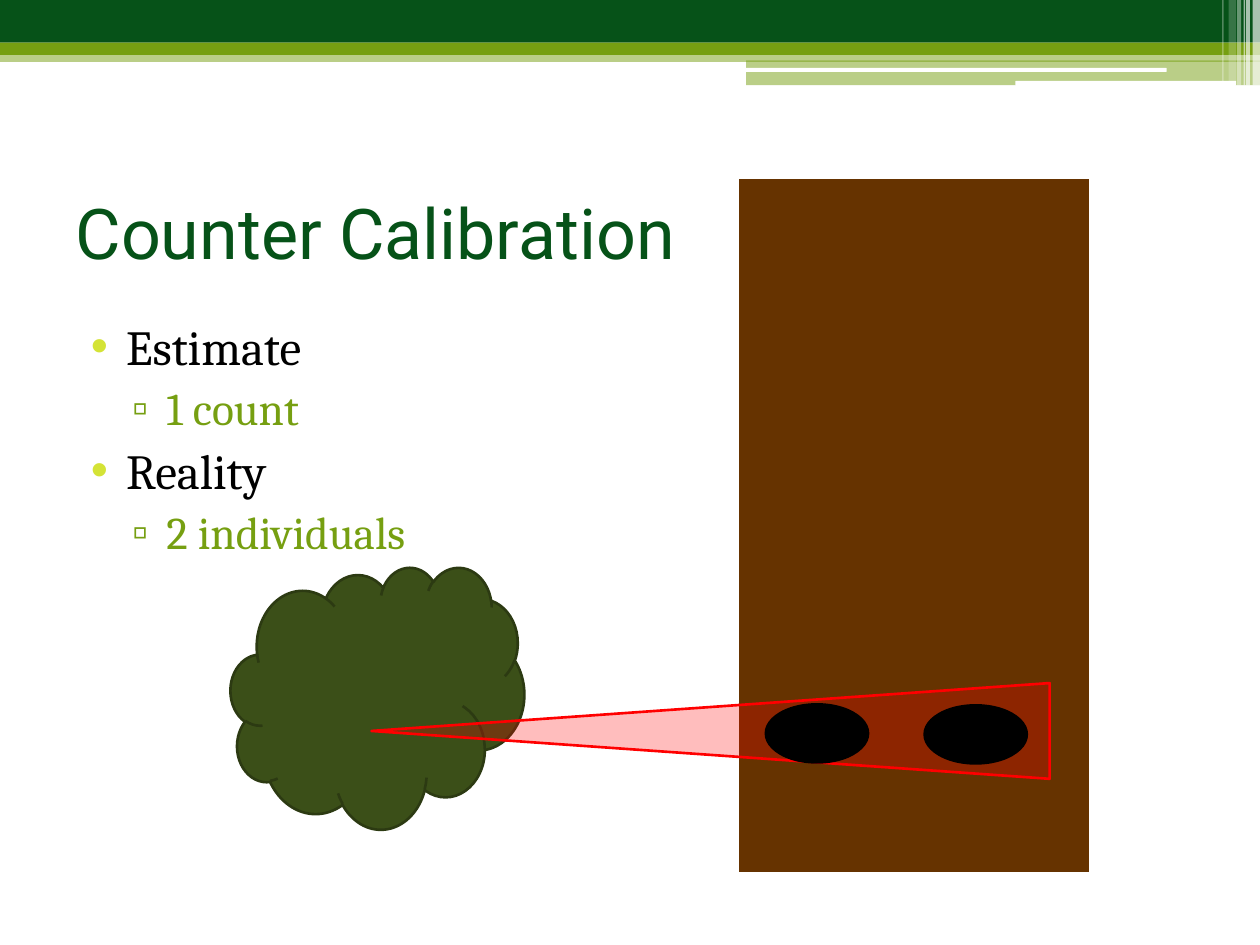
from pptx import Presentation
from pptx.dml.color import RGBColor
from pptx.enum.shapes import MSO_CONNECTOR, MSO_SHAPE as Kind
from pptx.enum.text import MSO_ANCHOR, MSO_AUTO_SIZE, PP_ALIGN
from pptx.oxml.ns import qn
from pptx.util import Cm, Pt
from lxml.etree import SubElement

FOREST = RGBColor(0x06, 0x52, 0x18)
OLIVE = RGBColor(0x76, 0x9F, 0x11)
LIME = RGBColor(0xD4, 0xE3, 0x36)
WHITE = RGBColor(0xFF, 0xFF, 0xFF)
BLACK = RGBColor(0, 0, 0)
BARK = RGBColor(0x66, 0x33, 0x00)
LEAF = RGBColor(0x3B, 0x4F, 0x18)
LEAF_EDGE = RGBColor(0x2C, 0x3A, 0x12)
RED = RGBColor(0xFF, 0, 0)

WIDTH, HEIGHT = 25.4, 19.05
TITLE = "Counter Calibration"
OUTLINE = [("Estimate", 0), ("1 count", 1), ("Reality", 0), ("2 individuals", 1)]
LEVELS = [
    dict(bullet="•", bullet_color=LIME, margin=1.02, hang=0.71, size=28, color=BLACK),
    dict(bullet="▫", bullet_color=OLIVE, margin=1.83, hang=0.69, size=26, color=OLIVE),
]

BANDS = [
    (Kind.RECTANGLE, (0, 1.02, WIDTH, 0.23), OLIVE, 50),
    (Kind.RECTANGLE, (0, 0, WIDTH, 0.86), FOREST, 100),
    (Kind.RECTANGLE, (0, 0.86, WIDTH, 0.25), OLIVE, 100),
    (Kind.RECTANGLE, (15.04, 1.22, 10.36, 0.5), OLIVE, 50),
    (Kind.ROUNDED_RECTANGLE, (15.01, 1.37, 8.51, 0.08), WHITE, 100),
    (Kind.ROUNDED_RECTANGLE, (20.47, 1.63, 4.45, 0.1), WHITE, 100),
]
STRIPES = [
    (25.25, 0.15, 1.73, 65),
    (25.12, 0.08, 1.73, 65),
    (25.07, 0.03, 1.73, 60),
    (24.94, 0.08, 1.73, 40),
    (24.77, 0.15, 1.63, 20),
    (24.64, 0.03, 1.63, 30),
]
TRUNK = dict(x=18.43, top=3.61, bottom=17.58, thickness=200)
BUSH = (4.65, 11.43, 5.92, 5.28)
BEAM = (13.36, 7.9, 1.93, 13.67)
ANIMALS = [(15.44, 14.2, 2.06, 1.17), (18.64, 14.22, 2.06, 1.17)]


def add_figure(page, kind, place, fill, opacity=100, edge=None):
    shape = page.shapes.add_shape(kind, *map(Cm, place))
    shape.shadow.inherit = False
    shape.fill.solid()
    shape.fill.fore_color.rgb = fill
    if opacity < 100:
        color = shape.fill._xPr.find(qn("a:solidFill"))[0]
        SubElement(color, qn("a:alpha"), val=str(opacity * 1000))
    if edge is None:
        shape.line.fill.background()
    else:
        shape.line.color.rgb = edge
        shape.line.width = Pt(1.5)
    return shape


def place_text(box, place, anchor):
    box.left, box.top, box.width, box.height = map(Cm, place)
    settings = dict(word_wrap=True, auto_size=MSO_AUTO_SIZE.NONE, vertical_anchor=anchor)
    for name, value in settings.items():
        setattr(box.text_frame, name, value)
    return box.text_frame


def write(para, text, font, size, color):
    para.alignment = PP_ALIGN.LEFT
    span = para.add_run()
    span.text = text
    for name, value in dict(name=font, size=Pt(size)).items():
        setattr(span.font, name, value)
    span.font.color.rgb = color


def set_bullet(para, style):
    props = para._p.get_or_add_pPr()
    props.set("marL", str(Cm(style["margin"])))
    props.set("indent", str(-Cm(style["hang"])))
    color = SubElement(props, qn("a:buClr"))
    SubElement(color, qn("a:srgbClr"), val=str(style["bullet_color"]))
    SubElement(props, qn("a:buChar"), char=style["bullet"])


def add_trunk(page):
    x = Cm(TRUNK["x"])
    trunk = page.shapes.add_connector(
        MSO_CONNECTOR.STRAIGHT, x, Cm(TRUNK["top"]), x, Cm(TRUNK["bottom"]))
    trunk.line.color.rgb = BARK
    trunk.line.width = Pt(TRUNK["thickness"])
    SubElement(trunk._element.spPr, qn("a:effectLst"))


def main():
    deck = Presentation()
    deck.slide_width, deck.slide_height = Cm(WIDTH), Cm(HEIGHT)
    page = deck.slides.add_slide(deck.slide_layouts[1])

    heading = place_text(page.shapes.title, (1.27, 3.18, 22.86, 2.97), MSO_ANCHOR.MIDDLE)
    write(heading.paragraphs[0], TITLE, "Roboto", 40, FOREST)

    body = place_text(page.placeholders[1], (1.27, 6.25, 22.86, 12.01), MSO_ANCHOR.TOP)
    for index, (text, level) in enumerate(OUTLINE):
        para = body.add_paragraph() if index else body.paragraphs[0]
        style = LEVELS[level]
        para.level = level
        para.space_before = Pt(3)
        set_bullet(para, style)
        write(para, text, "Cambria", style["size"], style["color"])

    for band in BANDS:
        add_figure(page, *band)
    for left, width, height, opacity in STRIPES:
        add_figure(page, Kind.RECTANGLE, (left, 0, width, height), WHITE, opacity)

    add_trunk(page)
    add_figure(page, Kind.CLOUD, BUSH, LEAF, edge=LEAF_EDGE)
    beam = add_figure(page, Kind.ISOSCELES_TRIANGLE, BEAM, RED, 26, RED)
    beam.rotation = 270
    for animal in ANIMALS:
        add_figure(page, Kind.OVAL, animal, BLACK, edge=BLACK)

    deck.save("out.pptx")


if __name__ == "__main__":
    main()
